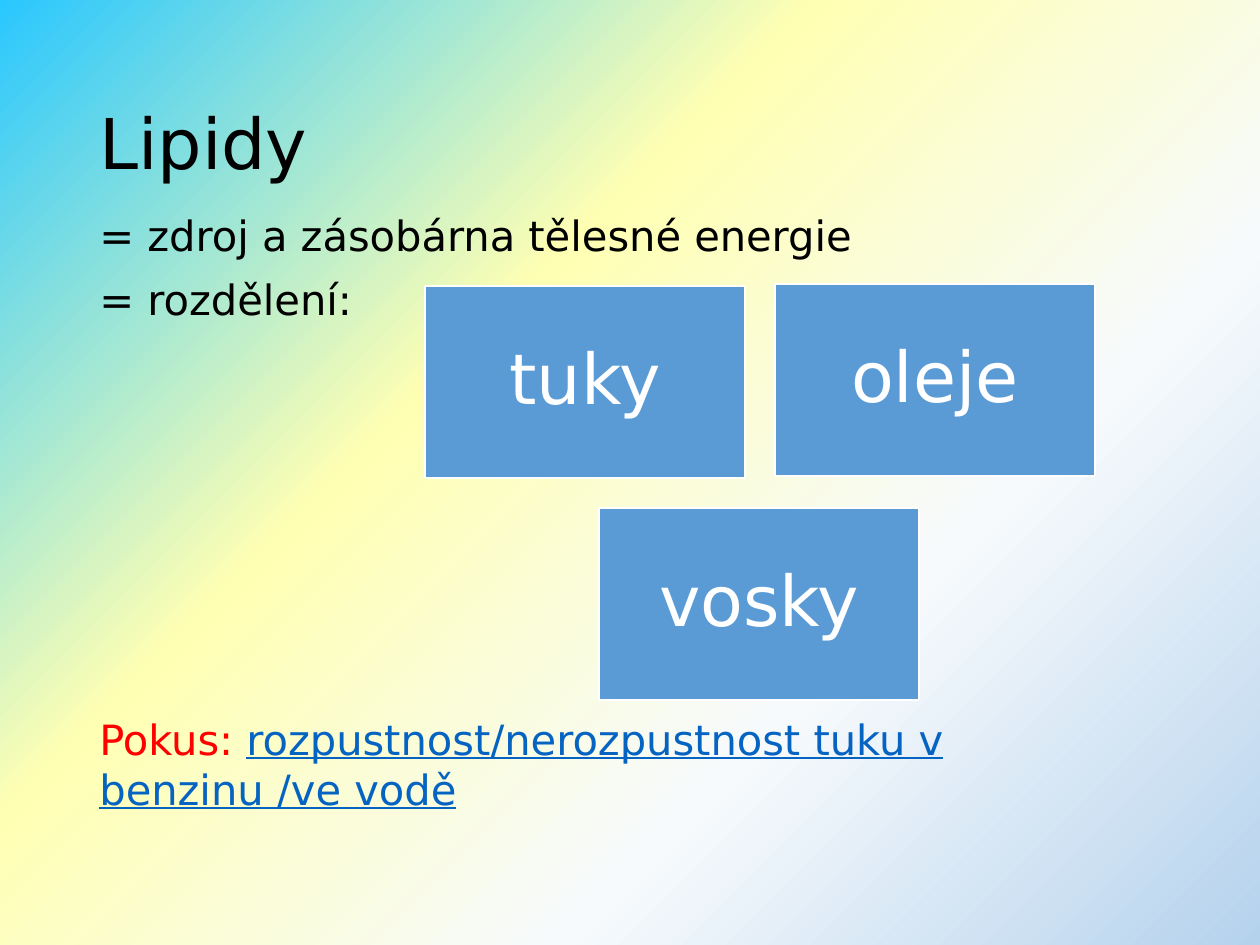
from copy import deepcopy

from pptx import Presentation
from pptx.dml.color import RGBColor
from pptx.enum.shapes import MSO_SHAPE as Shape
from pptx.enum.text import MSO_ANCHOR as Anchor, PP_ALIGN as Align
from pptx.oxml.ns import qn
from pptx.util import Emu, Pt

FONT = "DejaVu Sans"
BACKDROP = [(0, "29C7FF"), (0.37, "FFFFB3"), (0.68, "F7FAFD"), (1, "B5D2EC")]
LIPID_KINDS = [("tuky", 425, 286), ("oleje", 775, 284), ("vosky", 599, 508)]
KIND_SIZE = (320, 192)


def px(length):
    """Turn pixels at 126 to the inch into EMU."""
    return Emu(round(length * 914400 / 126))


def rgb(code):
    """Turn a hex string into a colour."""
    return RGBColor.from_string(code)


def style(font, size, color):
    """Set typeface, size and colour."""
    font.name, font.size = FONT, Pt(size)
    font.color.rgb = rgb(color)


def paint_background(slide):
    """Fill the slide with a diagonal gradient."""
    fill = slide.background.fill
    fill.gradient()
    fill.gradient_angle = 315
    stop_list = slide.element.find(".//" + qn("a:gsLst"))
    while len(stop_list) < len(BACKDROP):
        stop_list.append(deepcopy(stop_list[0]))
    for stop, (position, color) in zip(fill.gradient_stops, BACKDROP):
        stop.position = position
        stop.color.rgb = rgb(color)


def add_text(slide, box, lines, size, anchor=Anchor.TOP):
    """Add a text box of lines, each a list of (text, colour, underlined)."""
    frame = slide.shapes.add_textbox(*map(px, box)).text_frame
    frame.word_wrap = True
    frame.vertical_anchor = anchor
    for number, pieces in enumerate(lines):
        line = frame.add_paragraph() if number else frame.paragraphs[0]
        if number:
            line.space_before = Pt(7.5)
        for text, color, underlined in pieces:
            run = line.add_run()
            run.text = text
            style(run.font, size, color)
            if underlined:
                run.font.underline = True


def add_kind(slide, name, left, top):
    """Add a blue box that names one kind of lipid."""
    box = slide.shapes.add_shape(Shape.RECTANGLE, *map(px, (left, top, *KIND_SIZE)))
    box.shadow.inherit = False
    box.fill.solid()
    box.fill.fore_color.rgb = rgb("5B9BD5")
    box.line.color.rgb = rgb("FFFFFF")
    box.line.width = Pt(1)
    frame = box.text_frame
    frame.word_wrap = True
    frame.vertical_anchor = Anchor.MIDDLE
    frame.margin_left = frame.margin_right = px(21)
    frame.margin_top = frame.margin_bottom = px(21)
    label = frame.paragraphs[0]
    label.text = name
    label.alignment = Align.CENTER
    label.line_spacing = 0.9
    style(label.font, 40, "FFFFFF")


def main():
    """Build the slide about lipids."""
    deck = Presentation()
    deck.slide_width, deck.slide_height = px(1260), px(945)
    slide = deck.slides.add_slide(deck.slide_layouts[6])
    paint_background(slide)
    add_text(slide, (87, 50, 1086, 183), [[("Lipidy", "000000", False)]], 40, Anchor.MIDDLE)
    facts = ["= zdroj a zásobárna tělesné energie", "= rozdělení:"]
    add_text(slide, (87, 204, 1086, 130), [[(fact, "000000", False)] for fact in facts], 23.8)
    experiment = [
        ("Pokus: ", "FF0000", False),
        ("rozpustnost/nerozpustnost tuku v benzinu /ve vodě", "0563C1", True),
    ]
    add_text(slide, (87, 708, 970, 115), [experiment], 23.8)
    for kind in LIPID_KINDS:
        add_kind(slide, *kind)
    deck.save("out.pptx")


if __name__ == "__main__":
    main()
